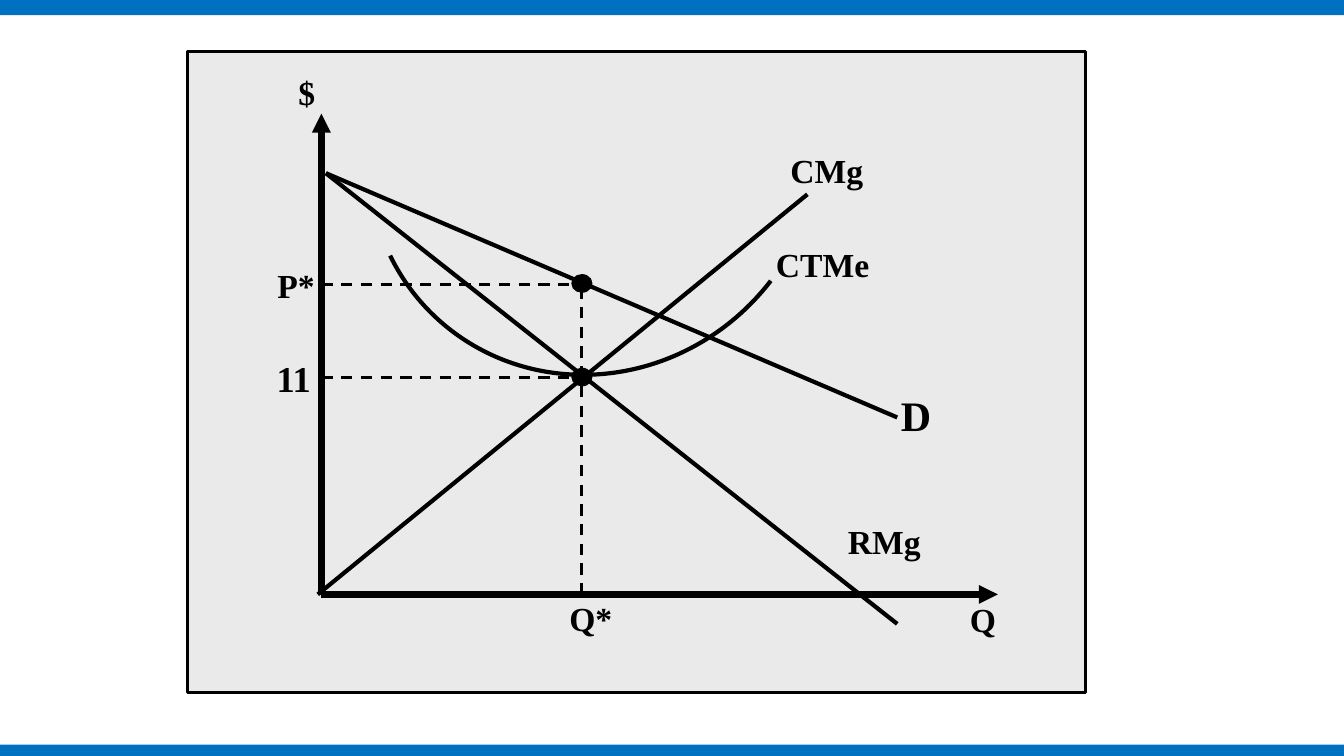
from dataclasses import dataclass

from pptx import Presentation, util as u
from pptx.dml.color import RGBColor
from pptx.enum import dml, shapes, text
from pptx.oxml.ns import qn
from lxml import etree


@dataclass(frozen=True)
class Theme:
    bar: RGBColor = RGBColor(0x00, 0x70, 0xC0)
    panel: RGBColor = RGBColor(0xEA, 0xEA, 0xEA)
    ink: RGBColor = RGBColor(0, 0, 0)
    font: str = "Times New Roman"
    label: int = 24
    cost: int = 26
    demand: int = 30
    dot: float = 1
    guide: float = 2
    frame: float = 2.25
    curve: float = 3
    axis: float = 4.5


T = Theme()
KIND = shapes.MSO_SHAPE


class Box:
    """A region whose inner places are given in percent of its size."""

    def __init__(self, left, top, width, height):
        self.left, self.top = left, top
        self.width, self.height = width, height

    def point(self, x, y):
        return (u.Inches(self.left + self.width * x / 100),
                u.Inches(self.top + self.height * y / 100))

    def area(self, x, y, w, h):
        return (*self.point(x, y), u.Inches(self.width * w / 100),
                u.Inches(self.height * h / 100))


def add_form(slide, kind, area, fill=None, width=None):
    form = slide.shapes.add_shape(kind, *area)
    form.shadow.inherit = False
    if fill is None:
        form.fill.background()
    else:
        form.fill.solid()
        form.fill.fore_color.rgb = fill
    if width is None:
        form.line.fill.background()
    else:
        form.line.color.rgb = T.ink
        form.line.width = u.Pt(width)
    return form


def add_line(slide, box, start, end, width, dash=False, arrow=False):
    line = slide.shapes.add_connector(
        shapes.MSO_CONNECTOR.STRAIGHT, *box.point(*start), *box.point(*end))
    line.line.color.rgb = T.ink
    line.line.width = u.Pt(width)
    if dash:
        line.line.dash_style = dml.MSO_LINE.DASH
    if arrow:
        etree.SubElement(line.line._get_or_add_ln(), qn("a:tailEnd"),
                         type="triangle")
    etree.SubElement(line._element.spPr, qn("a:effectLst"))


def add_label(slide, box, words, x, y, w, size=T.label, right=False):
    label = slide.shapes.add_textbox(*box.area(x, y, w, 7.9))
    label.text_frame.word_wrap = False
    para = label.text_frame.paragraphs[0]
    para.text = words
    para.alignment = text.PP_ALIGN.RIGHT if right else text.PP_ALIGN.LEFT
    para.font.name = T.font
    para.font.size = u.Pt(size)
    para.font.bold = True
    para.font.color.rgb = T.ink


def draw_bars(slide, box):
    for top, height in ((-0.4, 2.4), (98.5, 1.75)):
        add_form(slide, KIND.RECTANGLE, box.area(0, top, 100, height), T.bar)


def draw_graph(slide, box):
    add_form(slide, KIND.RECTANGLE, box.area(0, 0, 100, 100), T.panel, T.frame)

    left, base = 14.9, 84.7
    best, price, cost = 43.9, 36.3, 50.9
    start = (15.4, 19)

    # Dashed guides
    for a, b in (((left, price), (best, price)),
                 ((left, cost), (best, cost)),
                 ((best, base), (best, price))):
        add_line(slide, box, a, b, T.guide, dash=True)

    # Marginal revenue, demand and marginal cost
    for a, b in ((start, (79, 89.3)), (start, (79, 57.1)),
                 ((14.5, base), (69, 22.3))):
        add_line(slide, box, a, b, T.curve)

    # Average total cost: the arc's angles are stored in 60000ths of a degree
    arc = add_form(slide, KIND.ARC, box.area(19.4, -19.5, 51.7, 69),
                   width=T.curve)
    arc.rotation = 132.2
    for i, angle in enumerate((264.84, 19.87)):
        arc.adjustments[i] = angle * 0.6

    # Axes
    for end in ((left, 9.7), (90.2, base)):
        add_line(slide, box, (left, base), end, T.axis, arrow=True)

    # Price and cost points
    wide, high = 2.2, 2.7
    for y in (price, cost):
        add_form(slide, KIND.OVAL,
                 box.area(best - wide / 2, y - high / 2 - 0.1, wide, high),
                 T.ink, T.dot)

    # Labels
    for row in (("RMg", 72.4, 72.5, 10.4), ("CMg", 66, 14.6, 10.4),
                ("CTMe", 64.4, 29.2, 12.7), ("Q", 86, 84.7, 8.9),
                ("Q*", 41.4, 84.4, 8.9), ("P*", 8.9, 32.5, 8.9),
                ("D", 78.3, 51.9, 5.6, T.demand),
                ("11", 8.8, 46.7, 6.2, T.cost),
                ("$", 9.4, 2.4, 5.9, T.label, True)):
        add_label(slide, box, *row)


def main():
    deck = Presentation()
    wide, high = 13.33, 7.5
    deck.slide_width, deck.slide_height = u.Inches(wide), u.Inches(high)
    slide = deck.slides.add_slide(deck.slide_layouts[6])
    draw_bars(slide, Box(0, 0, wide, high))
    draw_graph(slide, Box(1.86, 0.51, 8.91, 6.36))
    deck.save("out.pptx")


if __name__ == "__main__":
    main()
